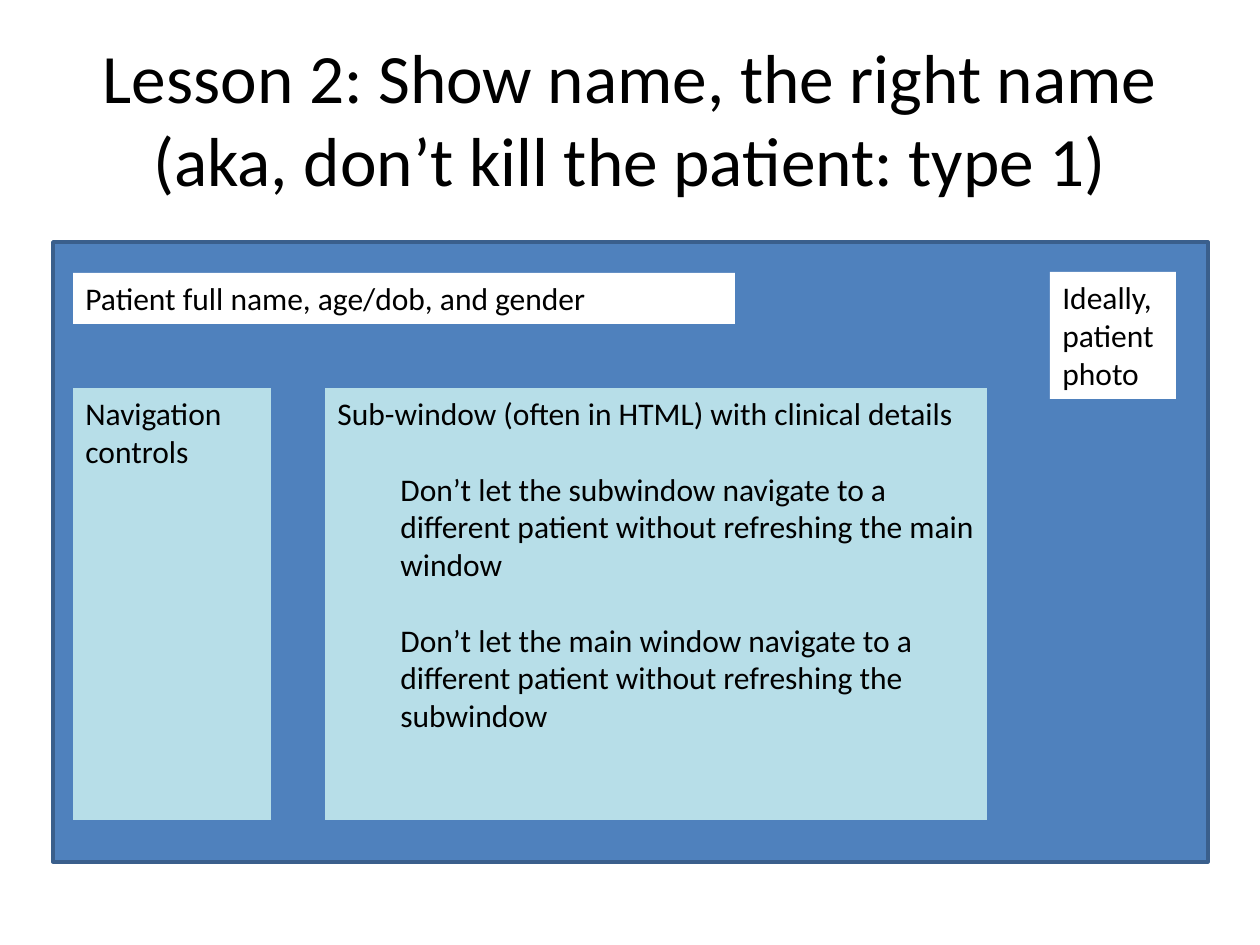
from pptx import Presentation
from pptx import util as u
from pptx.dml.color import RGBColor
from pptx.enum import shapes, text

PX = 914400 / 126  # 126 px to the inch
COLORS = {"frame": "4F81BD", "edge": "3A5F8C", "white": "FFFFFF",
          "panel": "B7DEE8", "text": "000000"}
TOP, HEIGHT = 388, 432  # shared by the two panels
INDENT = 63
LINE_GAP = u.Pt(21.5)


def px(*lengths):
    return [u.Emu(round(length * PX)) for length in lengths]


def add_run(paragraph, words, size):
    run = paragraph.add_run()
    run.text = words
    run.font.name = "Calibri"
    run.font.size = u.Pt(size)
    run.font.color.rgb = RGBColor.from_string(COLORS["text"])


presentation = Presentation()
presentation.slide_width, presentation.slide_height = px(1260, 945)
slide = presentation.slides.add_slide(presentation.slide_layouts[5])

# Title
title = slide.shapes.title
title.left, title.top, title.width, title.height = px(63, 38, 1134, 158)
title.text_frame.vertical_anchor = text.MSO_ANCHOR.MIDDLE
title.text_frame.word_wrap = True
title.text_frame.auto_size = text.MSO_AUTO_SIZE.NONE
paragraph = title.text_frame.paragraphs[0]
paragraph.alignment = text.PP_ALIGN.CENTER
add_run(paragraph, "Lesson 2: Show name, the right name (aka, don’t kill the patient: type 1)", 39.6)

# Main window
window = slide.shapes.add_shape(shapes.MSO_SHAPE.RECTANGLE, *px(53, 242, 1155, 620))
window.shadow.inherit = False
window.fill.solid()
window.fill.fore_color.rgb = RGBColor.from_string(COLORS["frame"])
window.line.color.rgb = RGBColor.from_string(COLORS["edge"])
window.line.width = u.Pt(2)

# Areas of the window: place, fill, heading and indented notes
areas = [
    ((73, 273, 662, 51), "white", ["Patient full name, age/dob, and gender"]),
    ((1050, 272, 126, 127), "white", ["Ideally, patient photo"]),
    ((325, TOP, 662, HEIGHT), "panel", [
        "Sub-window (often in HTML) with clinical details",
        "Don’t let the subwindow navigate to a different patient without refreshing the main window",
        "Don’t let the main window navigate to a different patient without refreshing the subwindow",
    ]),
    ((73, TOP, 198, HEIGHT), "panel", ["Navigation controls"]),
]
for place, color, lines in areas:
    area = slide.shapes.add_textbox(*px(*place))
    area.fill.solid()
    area.fill.fore_color.rgb = RGBColor.from_string(COLORS[color])
    frame = area.text_frame
    frame.word_wrap = True
    for index, line in enumerate(lines):
        paragraph = frame.add_paragraph() if index else frame.paragraphs[0]
        if index:
            paragraph.level = 1
            paragraph.space_before = LINE_GAP
            properties = paragraph._p.get_or_add_pPr()
            properties.set("marL", str(px(INDENT)[0]))
            properties.set("indent", "0")
        add_run(paragraph, line, 18)

presentation.save("out.pptx")
